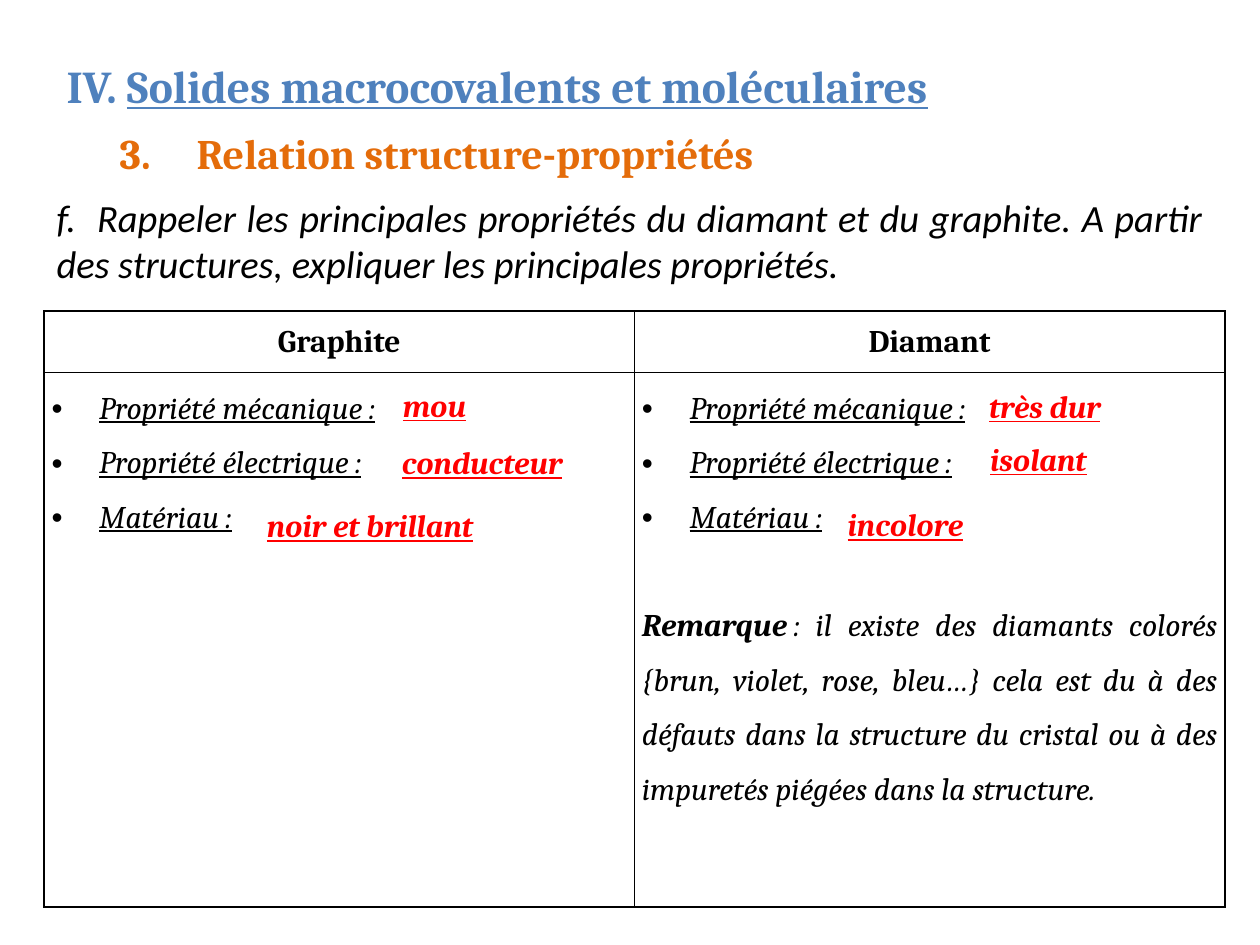
"""Build the slide that compares the properties of graphite and diamond."""
from dataclasses import dataclass

from pptx import Presentation, util as u
from pptx.dml import color
from pptx.enum import text
from pptx.oxml import ns, xmlchemy


@dataclass(frozen=True)
class Theme:
    """Colours, fonts and type sizes of the slide."""
    title: str = "4F81BD"
    heading: str = "E46C0A"
    ink: str = "000000"
    answer: str = "FF0000"
    serif: str = "Cambria"
    sans: str = "Calibri"
    title_size: int = 26
    heading_size: int = 24
    question_size: int = 22
    table_size: int = 18


THEME = Theme()
LEFT = 0.89
LIST_INDENT = 0.96
CELL_FONT = {"name": THEME.serif, "size": u.Pt(THEME.table_size), "color": THEME.ink}
ANSWER_FONT = CELL_FONT | {"color": THEME.answer, "bold": True, "italic": True, "underline": True}
JUSTIFIED = {"alignment": text.PP_ALIGN.JUSTIFY, "line_spacing": 1.5}
PROPERTIES = ("Propriété mécanique\u00a0:", "Propriété électrique :", "Matériau :")
REMARK = ("\u00a0: il existe des diamants colorés {brun, violet, rose, bleu…} cela est du à des "
          "défauts dans la structure du cristal ou à des impuretés piégées dans la structure.")
ANSWERS = (
    ("mou", (7.87, 7.65, 1.85, 1.02), 1),
    ("conducteur", (7.85, 8.81, 3.78, 1.12), 1),
    ("noir et brillant", (5.13, 9.7, 4.78, 1.27), 1.5),
    ("très dur", (19.69, 7.67, 2.82, 1.02), 1),
    ("isolant", (19.71, 8.74, 2.51, 1.02), 1),
    ("incolore", (16.84, 9.68, 2.87, 1.6), 1.5),
)


def set_values(target, values):
    """Set each named value on the target."""
    for name, value in values.items():
        setattr(target, name, value)


def place(shape, box):
    """Move and size a shape, in centimetres."""
    set_values(shape, dict(zip(("left", "top", "width", "height"), map(u.Cm, box))))


def add_run(paragraph, words, font):
    """Add a formatted run to a paragraph."""
    run = paragraph.add_run()
    run.text = words
    set_values(run.font, {name: value for name, value in font.items() if name != "color"})
    run.font.color.rgb = color.RGBColor.from_string(font["color"])


def set_list_format(paragraph, margin, indent, bullet=None):
    """Give a paragraph a hanging indent and a bullet or none."""
    properties = paragraph._p.get_or_add_pPr()
    properties.set("marL", str(u.Cm(margin)))
    properties.set("indent", str(u.Cm(indent)))
    if bullet:
        xmlchemy.OxmlElement("a:buFont")
        font = xmlchemy.OxmlElement("a:buFont")
        font.set("typeface", "Arial")
        mark = xmlchemy.OxmlElement("a:buChar")
        mark.set("char", bullet)
        properties.extend((font, mark))
    else:
        properties.append(xmlchemy.OxmlElement("a:buNone"))


def fill_placeholder(placeholder, box, runs):
    """Place a placeholder and write one left-aligned paragraph in it."""
    place(placeholder, box)
    set_values(placeholder.text_frame, {"auto_size": text.MSO_AUTO_SIZE.NONE,
                                        "vertical_anchor": text.MSO_ANCHOR.TOP})
    paragraph = placeholder.text_frame.paragraphs[0]
    set_values(paragraph, {"alignment": text.PP_ALIGN.LEFT, "space_before": u.Pt(0)})
    for words, font in runs:
        add_run(paragraph, words, font)
    return paragraph


def add_text(slide, words, box, font, paragraph_format, wrap=False):
    """Add a text box holding one paragraph."""
    shape = slide.shapes.add_textbox(0, 0, 0, 0)
    place(shape, box)
    set_values(shape.text_frame, {"word_wrap": wrap, "auto_size": text.MSO_AUTO_SIZE.SHAPE_TO_FIT_TEXT})
    paragraph = shape.text_frame.paragraphs[0]
    set_values(paragraph, paragraph_format)
    add_run(paragraph, words, font)


def format_cell(cell):
    """Give a cell thin black borders, narrow margins and no fill."""
    properties = cell._tc.get_or_add_tcPr()
    for side in ("lnL", "lnR", "lnT", "lnB"):
        line = xmlchemy.OxmlElement(f"a:{side}")
        line.set("w", str(u.Pt(1)))
        fill = xmlchemy.OxmlElement("a:solidFill")
        ink = xmlchemy.OxmlElement("a:srgbClr")
        ink.set("val", THEME.ink)
        fill.append(ink)
        line.append(fill)
        properties.append(line)
    cell.fill.background()
    set_values(cell, {"margin_left": u.Cm(0.15), "margin_right": u.Cm(0.15),
                      "margin_top": 0, "margin_bottom": 0})


def add_properties_table(slide):
    """Add the table of both materials and return it."""
    table = slide.shapes.add_table(2, 2, *map(u.Cm, (LEFT, 6.27, 23.8, 12.01))).table
    for row, height in zip(table.rows, (1.24, 10.77)):
        row.height = u.Cm(height)
    for column, material in enumerate(("Graphite", "Diamant")):
        header, body = table.cell(0, column), table.cell(1, column)
        format_cell(header)
        format_cell(body)
        header.vertical_anchor = text.MSO_ANCHOR.MIDDLE
        paragraph = header.text_frame.paragraphs[0]
        paragraph.alignment = text.PP_ALIGN.CENTER
        add_run(paragraph, material, CELL_FONT | {"bold": True})
        for index, name in enumerate(PROPERTIES):
            frame = body.text_frame
            paragraph = frame.add_paragraph() if index else frame.paragraphs[0]
            set_values(paragraph, JUSTIFIED)
            set_list_format(paragraph, LIST_INDENT, -LIST_INDENT, "•")
            add_run(paragraph, name, CELL_FONT | {"italic": True, "underline": True})
    return table


def add_remark(cell):
    """Add the remark under the property list of a cell."""
    paragraph = cell.text_frame.add_paragraph()
    set_values(paragraph, JUSTIFIED | {"space_before": u.Pt(31)})
    add_run(paragraph, "Remarque", CELL_FONT | {"bold": True, "italic": True})
    add_run(paragraph, REMARK, CELL_FONT | {"italic": True})


def main():
    """Build and save the presentation."""
    presentation = Presentation()
    set_values(presentation, {"slide_width": u.Cm(25.4), "slide_height": u.Cm(19.05)})
    slide = presentation.slides.add_slide(presentation.slide_layouts[1])
    title_font = {"name": THEME.serif, "size": u.Pt(THEME.title_size), "color": THEME.title, "bold": True}
    fill_placeholder(slide.shapes.title, (1.09, 1.04, 23.01, 1.4),
                     (("IV. ", title_font),
                      ("Solides macrocovalents et moléculaires", title_font | {"underline": True})))
    heading_font = title_font | {"size": u.Pt(THEME.heading_size), "color": THEME.heading}
    heading = fill_placeholder(slide.placeholders[1], (LEFT, 2.44, 23.01, 1.27),
                               (("3.\tRelation structure-propriétés", heading_font),))
    set_list_format(heading, 2.82, -1.55)
    add_text(slide, "f.  Rappeler les principales propriétés du diamant et du graphite. A partir "
             "des structures, expliquer les principales propriétés.", (LEFT, 3.78, 23.6, 2.13),
             {"name": THEME.sans, "size": u.Pt(THEME.question_size), "color": THEME.ink, "italic": True},
             {"alignment": text.PP_ALIGN.JUSTIFY}, wrap=True)
    add_remark(add_properties_table(slide).cell(1, 1))
    for words, box, spacing in ANSWERS:
        add_text(slide, words, box, ANSWER_FONT, {"line_spacing": spacing})
    presentation.save("out.pptx")


if __name__ == "__main__":
    main()
